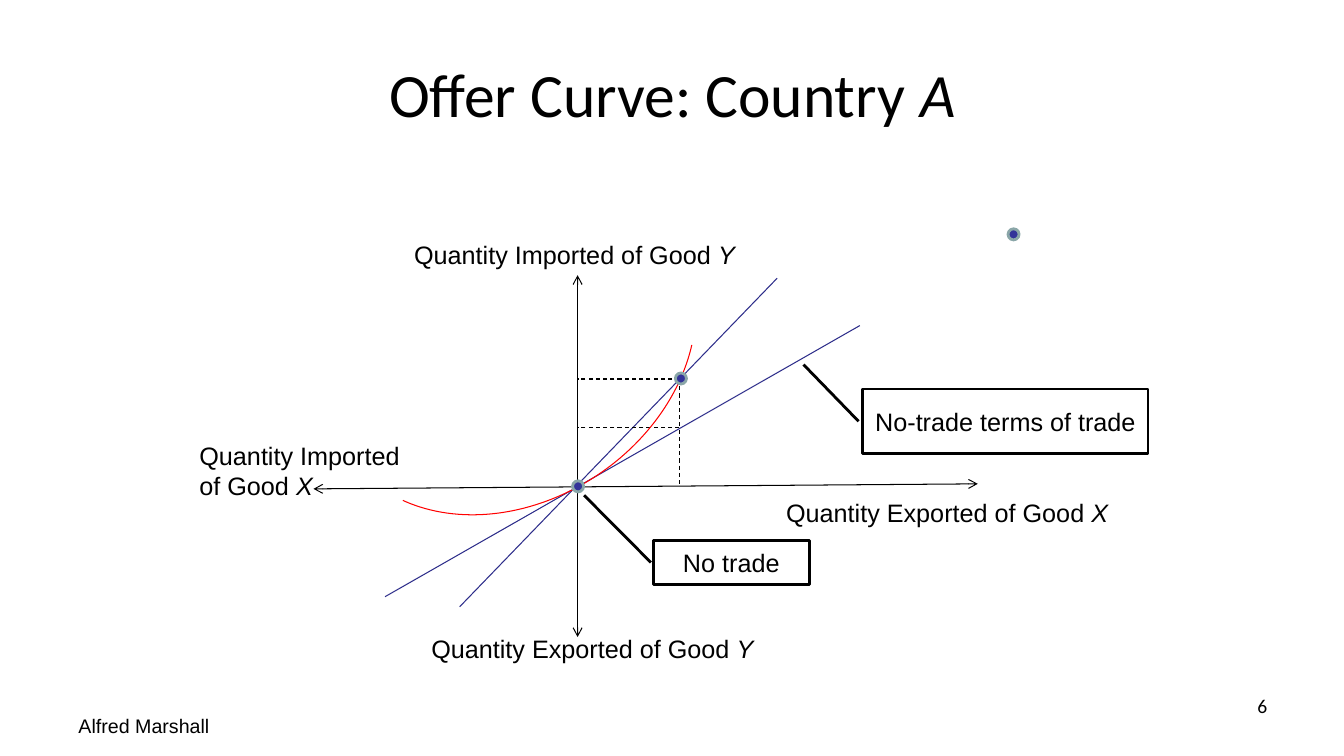
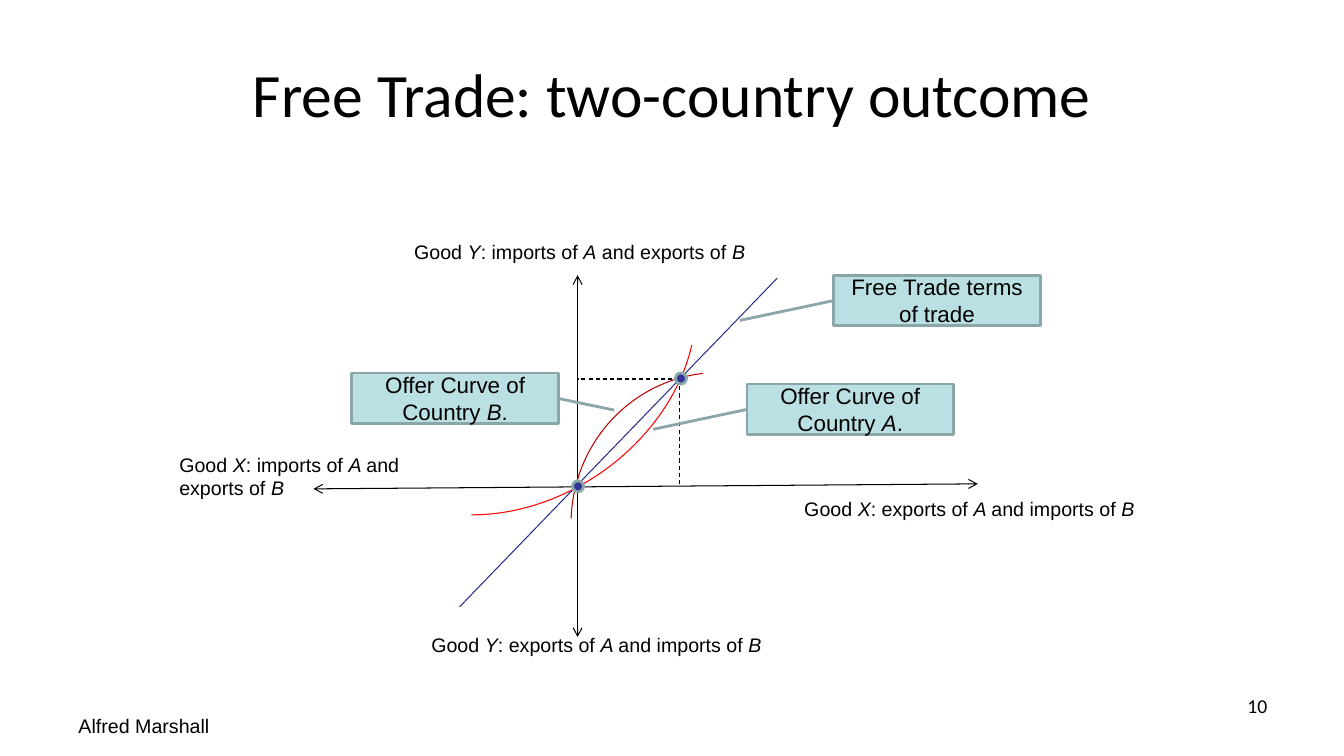
from dataclasses import dataclass

import pptx
import pptx.dml.color
import pptx.enum.dml
import pptx.enum.shapes
import pptx.enum.text
import pptx.oxml
import pptx.oxml.ns
import pptx.util

# Lengths are counted in columns and rows of a square grid.
CELL = pptx.util.Inches(0.1)
COLUMNS, ROWS = 133.33, 75

BLACK, RAY_BLUE, DOT_BLUE = "000000", "2D2D8A", "333399"
RED, DARK_RED = "FF0000", "C00000"
GREY, PALE_TEAL = "8AA6A8", "BBE0E3"
THIN, THICK = 0.75, 2

AXIS_COLUMN = 57.3
TRADE_COLUMN, TRADE_ROW = 67.4, 37.6
NO_TRADE_DOT, FREE_TRADE_DOT, LONE_DOT = (57.35, 48.25), (67.55, 37.55), (100.55, 23.25)
DOT_SIZE = 1.1

Align = pptx.enum.text.PP_ALIGN
Anchor = pptx.enum.text.MSO_ANCHOR
Preset = pptx.enum.shapes.MSO_SHAPE


@dataclass(frozen=True)
class Box:
    left: float
    top: float
    width: float
    height: float

    def lengths(self) -> tuple:
        return tuple(grid(n) for n in (self.left, self.top, self.width, self.height))


@dataclass(frozen=True)
class Label:
    text: str
    box: Box


@dataclass(frozen=True)
class Line:
    start: tuple[float, float]
    end: tuple[float, float]
    color: str = BLACK
    dashed: bool = False
    arrows: bool = False


@dataclass(frozen=True)
class Curve:
    box: Box
    rotation: float
    angles: tuple[float, float]
    color: str = RED


@dataclass(frozen=True)
class Callout:
    text: str
    box: Box
    pointer: tuple[float, float, float, float]


@dataclass(frozen=True)
class Diagram:
    title: str
    number: str
    label_size: int
    labels: list[Label]
    curves: list[Curve]
    lines: list[Line]
    dots: list[tuple[float, float]]
    callouts: list[Callout]
    callout_size: int
    callout_line: str
    callout_fill: str | None = None


AXES = [
    Line((31.1, 48.5), (97, 48), arrows=True),
    Line((AXIS_COLUMN, 27.3), (AXIS_COLUMN, 63.2), arrows=True),
]
SHARED_LINES = AXES + [
    Line((45.6, 60.2), (77.1, 27.6), RAY_BLUE),
    Line((TRADE_COLUMN, TRADE_ROW), (TRADE_COLUMN, 48.3), dashed=True),
    Line((TRADE_COLUMN, TRADE_ROW), (AXIS_COLUMN, TRADE_ROW), dashed=True),
]
CURVE_A_BOX, CURVE_A_ROTATION = Box(31.3, 18.9, 38.9, 30.8), 146
BESIDE_LEFT = (0.51, -0.005, 0.899, -0.454)

DIAGRAMS = [
    Diagram(
        title="Offer Curve: Country *A*",
        number="6",
        label_size=18,
        labels=[
            Label("Quantity Imported of Good *Y*", Box(40.1, 23.3, 35.9, 4)),
            Label("Quantity Exported of Good *Y*", Box(41.8, 62.3, 35.9, 4)),
            Label("Quantity Exported of Good *X*", Box(77, 48.8, 35.9, 4)),
            Label("Quantity Imported of Good *X*", Box(18.8, 43.2, 23.8, 7.1)),
        ],
        curves=[Curve(CURVE_A_BOX, CURVE_A_ROTATION, (128.24, 203.46))],
        lines=SHARED_LINES + [
            Line((38.2, 59.2), (85.3, 32.3), RAY_BLUE),
            Line((TRADE_COLUMN, 42.4), (AXIS_COLUMN, 42.4), dashed=True),
        ],
        dots=[LONE_DOT, NO_TRADE_DOT, FREE_TRADE_DOT],
        callouts=[
            Callout("No trade", Box(64.8, 53.6, 15.5, 4.4), (0.5, -0.015, -1.013, -0.442)),
            Callout("No-trade terms of trade", Box(85.6, 38.6, 28.3, 6.4),
                    (0.5, -0.015, -0.38, -0.208)),
        ],
        callout_size=18,
        callout_line=BLACK,
    ),
    Diagram(
        title="Free Trade: two-country outcome",
        number="10",
        label_size=14,
        labels=[
            Label("Good *Y*: imports of *A* and exports of *B*", Box(40.1, 23.3, 35.9, 3.4)),
            Label("Good *Y*: exports of *A *and imports of *B*", Box(41.8, 62.3, 35.9, 3.4)),
            Label("Good *X*: exports of *A *and imports of *B*", Box(78.8, 48.8, 35.9, 3.4)),
            Label("Good *X*: imports of *A *and exports of *B*", Box(16.8, 44.4, 24.2, 5.7)),
        ],
        curves=[
            Curve(Box(56.4, 37.2, 30, 29.5), 270, (163.16, 212.22), DARK_RED),
            Curve(CURVE_A_BOX, CURVE_A_ROTATION, (128.24, 190.43)),
        ],
        lines=SHARED_LINES,
        dots=[NO_TRADE_DOT, FREE_TRADE_DOT],
        callouts=[
            Callout("Offer Curve of Country *A*.", Box(74.1, 38.1, 20.5, 5), BESIDE_LEFT),
            Callout("Offer Curve of Country *B*.", Box(34.9, 37, 20.5, 5),
                    (0.51, 1.003, 0.738, 1.27)),
            Callout("Free Trade terms of trade", Box(82.7, 27.3, 20.5, 5), BESIDE_LEFT),
        ],
        callout_size=16,
        callout_line=GREY,
        callout_fill=PALE_TEAL,
    ),
]


def grid(count: float) -> pptx.util.Emu:
    return pptx.util.Emu(round(count * CELL))


def rgb(color: str) -> pptx.dml.color.RGBColor:
    return pptx.dml.color.RGBColor.from_string(color)


def write(shape, text: str, *, size: float, font: str = "Arial", color: str = BLACK,
          align=Align.LEFT, anchor=Anchor.TOP) -> None:
    """Fill a shape with one paragraph; text between asterisks is italic."""
    frame = shape.text_frame
    frame.word_wrap = True
    frame.vertical_anchor = anchor
    paragraph = frame.paragraphs[0]
    paragraph.alignment = align
    for index, part in enumerate(text.split("*")):
        if part:
            run = paragraph.add_run()
            run.text = part
            run.font.name = font
            run.font.size = pptx.util.Pt(size)
            run.font.italic = index % 2 == 1
            run.font.color.rgb = rgb(color)


def add_text(slide, text: str, box: Box, **text_format) -> None:
    write(slide.shapes.add_textbox(*box.lengths()), text, **text_format)


def add_preset(slide, preset, box: Box, *, line: str, width: float,
               fill: str | None = None, adjustments: tuple = ()):
    shape = slide.shapes.add_shape(preset, *box.lengths())
    shape.shadow.inherit = False
    if fill:
        shape.fill.solid()
        shape.fill.fore_color.rgb = rgb(fill)
    else:
        shape.fill.background()
    shape.line.color.rgb = rgb(line)
    shape.line.width = pptx.util.Pt(width)
    for index, value in enumerate(adjustments):
        shape.adjustments[index] = value
    return shape


def add_line(slide, line: Line) -> None:
    connector = slide.shapes.add_connector(
        pptx.enum.shapes.MSO_CONNECTOR.STRAIGHT,
        *(grid(n) for n in line.start + line.end))
    connector.line.color.rgb = rgb(line.color)
    connector.line.width = pptx.util.Pt(THIN)
    if line.dashed:
        connector.line.dash_style = pptx.enum.dml.MSO_LINE.DASH
    properties = connector.element.spPr
    if line.arrows:
        outline = properties.find(pptx.oxml.ns.qn("a:ln"))
        for tag in ("headEnd", "tailEnd"):
            outline.append(pptx.oxml.parse_xml(
                f'<a:{tag} {pptx.oxml.ns.nsdecls("a")} type="arrow"/>'))
    properties.append(pptx.oxml.parse_xml(f'<a:effectLst {pptx.oxml.ns.nsdecls("a")}/>'))


def add_curve(slide, curve: Curve) -> None:
    shape = add_preset(slide, Preset.ARC, curve.box, line=curve.color, width=THIN,
                       adjustments=curve.angles)
    shape.rotation = curve.rotation


def add_dot(slide, center: tuple[float, float]) -> None:
    left, top = (n - DOT_SIZE / 2 for n in center)
    add_preset(slide, Preset.OVAL, Box(left, top, DOT_SIZE, DOT_SIZE),
               line=GREY, width=THICK, fill=DOT_BLUE)


def add_diagram(presentation, layout, diagram: Diagram) -> None:
    slide = presentation.slides.add_slide(layout)
    write(slide.shapes.title, diagram.title, size=44, font="Calibri",
          align=Align.CENTER, anchor=Anchor.MIDDLE)
    for line in diagram.lines:
        add_line(slide, line)
    for curve in diagram.curves:
        add_curve(slide, curve)
    for label in diagram.labels:
        add_text(slide, label.text, label.box, size=diagram.label_size)
    for center in diagram.dots:
        add_dot(slide, center)
    for callout in diagram.callouts:
        shape = add_preset(slide, Preset.LINE_CALLOUT_1, callout.box,
                           line=diagram.callout_line, width=THICK,
                           fill=diagram.callout_fill, adjustments=callout.pointer)
        write(shape, callout.text, size=diagram.callout_size,
              align=Align.CENTER, anchor=Anchor.MIDDLE)
    add_text(slide, "Alfred Marshall", Box(6.8, 70.3, 21.2, 3.2), size=14)
    add_text(slide, diagram.number, Box(115.4, 68.3, 11.3, 5.2), size=14,
             font="Calibri", align=Align.RIGHT)


def main() -> None:
    presentation = pptx.Presentation()
    presentation.slide_width, presentation.slide_height = grid(COLUMNS), grid(ROWS)
    layout = presentation.slide_layouts.get_by_name("Title Only")
    title = layout.placeholders[0]
    title.left, title.top, title.width, title.height = Box(6.7, 3, 120, 12.5).lengths()
    for diagram in DIAGRAMS:
        add_diagram(presentation, layout, diagram)
    presentation.save("out.pptx")


if __name__ == "__main__":
    main()
